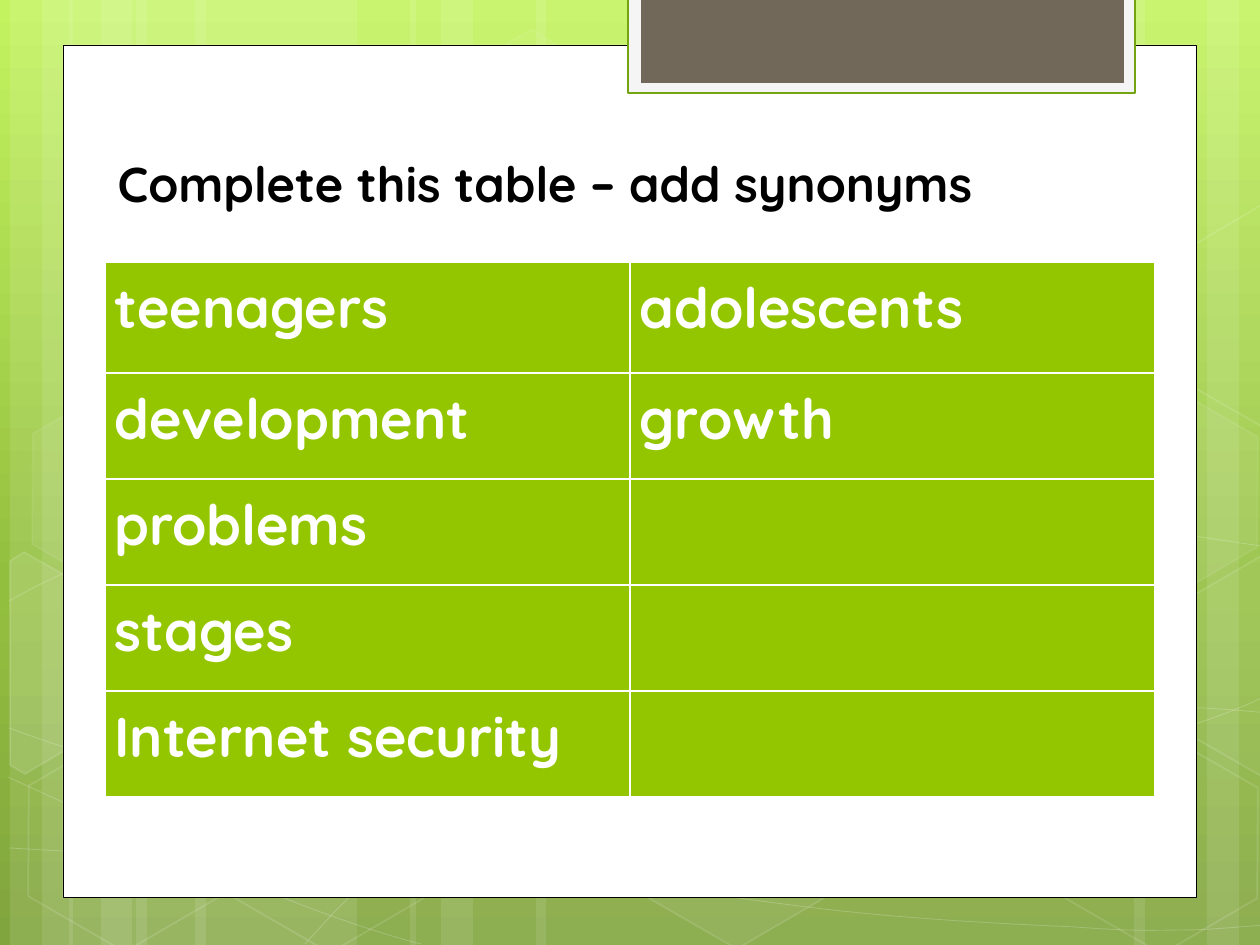
from lxml.etree import SubElement
from copy import deepcopy
from pptx import Presentation
from pptx.dml.color import RGBColor
from pptx.enum.shapes import MSO_SHAPE as Preset
from pptx.enum.text import MSO_ANCHOR as Anchor, MSO_AUTO_SIZE as AutoSize, PP_ALIGN as Align
from pptx.oxml.ns import qn
from pptx.util import Pt

PX = 914400 / 126
WIDTH, HEIGHT = 1260, 945
FONT = "Quicksand"

WHITE = RGBColor(0xFF, 0xFF, 0xFF)
BLACK = RGBColor(0x00, 0x00, 0x00)
LIGHT_GRAY = RGBColor(0xF5, 0xF5, 0xF5)
BROWN = RGBColor(0x71, 0x68, 0x5A)
DARK_GREEN = RGBColor(0x74, 0xA5, 0x10)
CELL_GREEN = RGBColor(0x94, 0xC6, 0x00)
BACKGROUND_STOPS = [
    (0, RGBColor(0xC3, 0xF3, 0x5F)),
    (0.62, RGBColor(0x93, 0xBF, 0x3F)),
    (1, RGBColor(0x81, 0xA5, 0x3E)),
]

BANDS = [
    (136, 221), (10, 63), (42, 105), (195, 221), (69, 63), (101, 105),
    (924, 221), (1207, 63), (1134, 105), (536, 388), (410, 63), (441, 105),
]
CURVES = [
    [(9, 848), (77, 852), (145, 856), (239, 854), (334, 853), (451, 851), (577, 838),
     (703, 825), (882, 801), (998, 777), (1113, 753), (1231, 716), (1269, 694)],
    [(9, 601), (45, 581), (82, 562), (152, 543), (224, 524), (326, 496), (437, 488),
     (549, 479), (685, 478), (824, 488), (963, 498), (1193, 537), (1269, 547)],
    [(8, 777), (160, 847), (311, 916), (421, 944)],
    [(9, 728), (48, 742), (88, 756), (161, 776), (234, 795), (344, 827), (450, 848),
     (554, 869), (687, 892), (791, 905), (896, 919), (1008, 924), (1075, 927),
     (1140, 932), (1158, 930), (1191, 930), (1223, 929), (1246, 926), (1269, 925)],
    [(305, 944), (328, 919), (350, 893), (381, 871), (411, 848), (454, 823), (489, 805),
     (524, 788), (546, 780), (592, 767), (638, 754), (722, 737), (766, 728),
     (811, 719), (818, 719), (857, 717), (896, 713), (958, 709), (1000, 708),
     (1044, 707), (1116, 708), (1116, 708), (1144, 708), (1173, 708), (1201, 708),
     (1223, 709), (1245, 711), (1256, 712), (1267, 713), (1264, 712), (1268, 713)],
]
HEXAGONS = [
    (421, 45, 4, 8), (626, 742, 6, 12), (14, 745, 0, 12), (18, 393, 7, 8),
    (219, 746, 0, 12), (949, 571, 10, 12), (1051, 747, 0, 12), (1051, 396, 7, 8),
]
CUT_HEXAGONS = [
    ([(10, 561), (24, 552), (121, 607), (120, 718), (25, 774), (10, 765)], 10),
    ([(1167, 611), (1261, 556), (1271, 562), (1271, 772), (1263, 777), (1167, 722)], 4),
    ([(1167, 261), (1261, 205), (1273, 212), (1271, 422), (1263, 427), (1167, 372)], 0),
]
SYNONYMS = [
    ("teenagers", "adolescents"),
    ("development", "growth"),
    ("problems", ""),
    ("stages", ""),
    ("Internet security", ""),
]
ROW_HEIGHTS = [111, 106, 106, 106, 106]


def px(*lengths):
    return [round(length * PX) for length in lengths]


def fill_white(fill, opacity):
    if not opacity:
        fill.background()
        return
    fill.solid()
    fill.fore_color.rgb = WHITE
    color = fill._xPr.find(qn("a:solidFill"))[0]
    SubElement(color, qn("a:alpha"), val=str(opacity * 1000))


def make_translucent(shape, fill_opacity, line_opacity=0, line_width=1):
    shape.shadow.inherit = False
    fill_white(shape.fill, fill_opacity)
    fill_white(shape.line.fill, line_opacity)
    if line_opacity:
        shape.line.width = Pt(line_width)


def add_outline(slide, points, close):
    builder = slide.shapes.build_freeform(*points[0], scale=PX)
    builder.add_line_segments(points[1:], close=close)
    return builder.convert_to_shape()


def add_curve(slide, controls):
    shape = add_outline(slide, controls, False)
    outline = next(shape._element.iter(qn("a:path")))
    segments = outline.findall(qn("a:lnTo"))
    for first in range(0, len(segments), 3):
        curve = SubElement(outline, qn("a:cubicBezTo"))
        for segment in segments[first:first + 3]:
            curve.append(segment[0])
            outline.remove(segment)
    return shape


def add_box(slide, bounds, color, line_color=None, line_width=0):
    shape = slide.shapes.add_shape(Preset.RECTANGLE, *px(*bounds))
    shape.shadow.inherit = False
    shape.fill.solid()
    shape.fill.fore_color.rgb = color
    if line_color is None:
        shape.line.fill.background()
    else:
        shape.line.color.rgb = line_color
        shape.line.width = Pt(line_width)


def set_background(slide):
    fill = slide.background.fill
    fill.gradient()
    fill.gradient_angle = 270
    stop_list = next(slide._element.iter(qn("a:gsLst")))
    stop_list.append(deepcopy(stop_list[-1]))
    for stop, (position, color) in zip(fill.gradient_stops, BACKGROUND_STOPS):
        stop.position = position
        stop.color.rgb = color


def add_decoration(slide):
    for left, width in BANDS:
        band = slide.shapes.add_shape(Preset.RECTANGLE, *px(left, 0, width, HEIGHT))
        make_translucent(band, 10)
    for controls in CURVES:
        make_translucent(add_curve(slide, controls), 0, 20, 0.5)
    for left, top, fill_opacity, line_opacity in HEXAGONS:
        hexagon = slide.shapes.add_shape(Preset.HEXAGON, *px(left, top, 221, 192))
        hexagon.adjustments[0] = 0.285
        hexagon.rotation = 30
        make_translucent(hexagon, fill_opacity, line_opacity)
    for points, fill_opacity in CUT_HEXAGONS:
        make_translucent(add_outline(slide, points, True), fill_opacity, 12)


def format_text(paragraph, size, color):
    font = paragraph.font
    font.name, font.size, font.bold = FONT, Pt(size), True
    font.color.rgb = color


def add_synonym_table(slide):
    table = slide.shapes.add_table(
        len(SYNONYMS), 2, *px(105, 262, 1050, sum(ROW_HEIGHTS))).table
    table.first_row = table.last_row = True
    table.horz_banding = False
    for row, height, words in zip(table.rows, ROW_HEIGHTS, SYNONYMS):
        row.height = px(height)[0]
        for cell, word in zip(row.cells, words):
            cell.fill.solid()
            cell.fill.fore_color.rgb = CELL_GREEN
            cell.margin_left = cell.margin_right = Pt(5.4)
            cell.margin_top = cell.margin_bottom = 0
            if word:
                cell.text = word
                paragraph = cell.text_frame.paragraphs[0]
                paragraph.line_spacing = 1.15
                paragraph.space_before = paragraph.space_after = Pt(10)
                format_text(paragraph, 32, WHITE)


def add_title(slide, text):
    title = slide.shapes.title
    slide.shapes._spTree.append(title._element)
    title.left, title.top, title.width, title.height = px(105, 147, 1029, 72)
    frame = title.text_frame
    frame.text = text
    frame.word_wrap = True
    frame.auto_size = AutoSize.SHAPE_TO_FIT_TEXT
    frame.vertical_anchor = Anchor.TOP
    paragraph = frame.paragraphs[0]
    paragraph.alignment = Align.LEFT
    format_text(paragraph, 28, BLACK)


def main():
    presentation = Presentation()
    presentation.slide_width, presentation.slide_height = px(WIDTH, HEIGHT)
    slide = presentation.slides.add_slide(presentation.slide_layouts[5])
    set_background(slide)
    add_decoration(slide)
    add_box(slide, (63, 45, 1134, 853), WHITE, BLACK, 0.5)
    add_box(slide, (628, -3, 507, 96), LIGHT_GRAY, DARK_GREEN, 1.25)
    add_box(slide, (641, -3, 483, 86), BROWN)
    add_synonym_table(slide)
    add_title(slide, "Complete this table – add synonyms")
    presentation.save("out.pptx")


if __name__ == "__main__":
    main()
